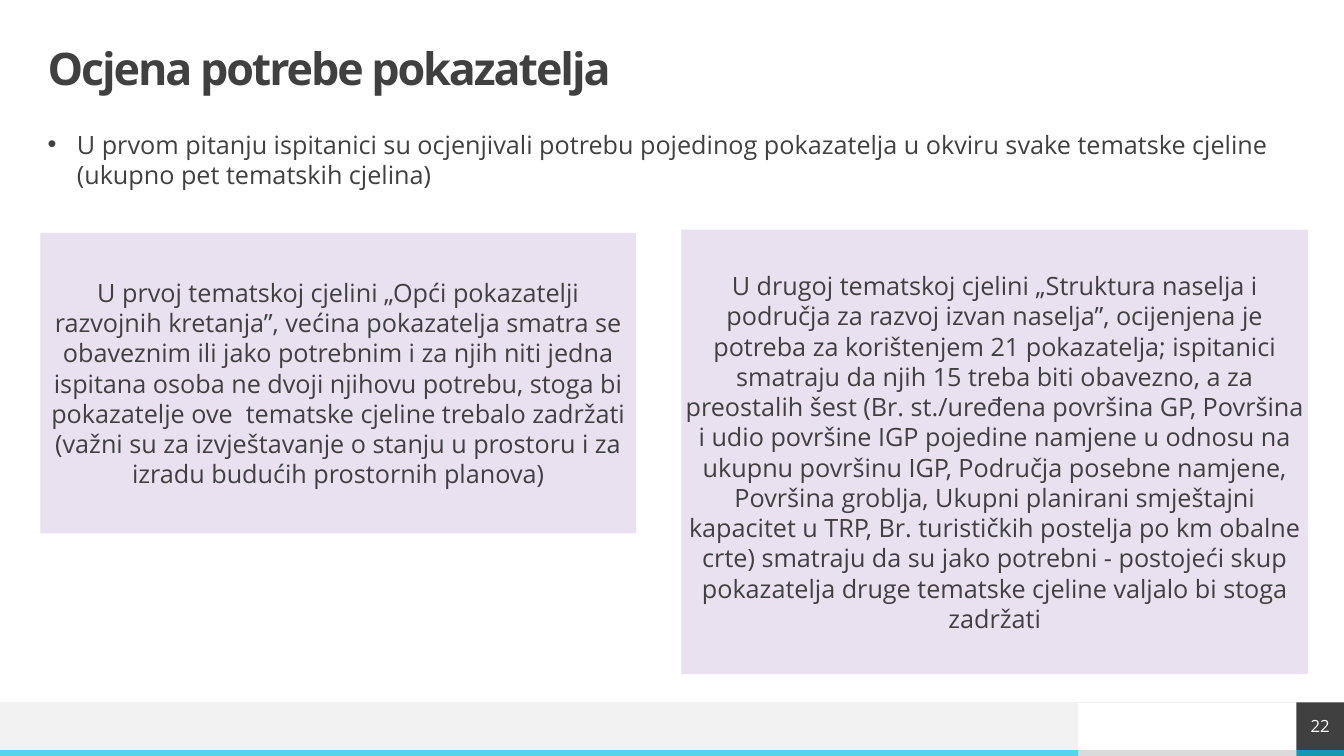
from lxml import etree
from pptx import Presentation
from pptx.dml.color import RGBColor
from pptx.enum.shapes import MSO_CONNECTOR, MSO_SHAPE
from pptx.enum.text import MSO_ANCHOR, PP_ALIGN
from pptx.oxml.ns import qn
from pptx.util import Cm, Pt

RECTANGLE = MSO_SHAPE.RECTANGLE
STRAIGHT = MSO_CONNECTOR.STRAIGHT
TOP, MIDDLE = MSO_ANCHOR.TOP, MSO_ANCHOR.MIDDLE
LEFT, CENTER = PP_ALIGN.LEFT, PP_ALIGN.CENTER

FONT = "Open Sans"
DARK = RGBColor(0x40, 0x40, 0x40)
WHITE = RGBColor(0xFF, 0xFF, 0xFF)
PURPLE = RGBColor(0x70, 0x30, 0xA0)
PALE = RGBColor(0xF2, 0xF2, 0xF2)
GREY = RGBColor(0xDA, 0xDA, 0xDA)
CYAN = RGBColor(0x58, 0xD4, 0xEA)
TEAL = RGBColor(0x16, 0x98, 0xAF)

# Content
TITLE = "Ocjena potrebe pokazatelja"
INTRO = ("U prvom pitanju ispitanici su ocjenjivali potrebu pojedinog pokazatelja "
         "u okviru svake tematske cjeline (ukupno pet tematskih cjelina)")
FIRST_THEME = (
    "U prvoj tematskoj cjelini „Opći pokazatelji razvojnih kretanja”, većina "
    "pokazatelja smatra se obaveznim ili jako potrebnim i za njih niti jedna "
    "ispitana osoba ne dvoji njihovu potrebu, stoga bi pokazatelje ove  tematske "
    "cjeline trebalo zadržati (važni su za izvještavanje o stanju u prostoru i za "
    "izradu budućih prostornih planova)")
SECOND_THEME = (
    "U drugoj tematskoj cjelini „Struktura naselja i područja za razvoj izvan "
    "naselja”, ocijenjena je potreba za korištenjem 21 pokazatelja; ispitanici "
    "smatraju da njih 15 treba biti obavezno, a za preostalih šest (Br. st./uređena "
    "površina GP, Površina i udio površine IGP pojedine namjene u odnosu na ukupnu "
    "površinu IGP, Područja posebne namjene, Površina groblja, Ukupni planirani "
    "smještajni kapacitet u TRP, Br. turističkih postelja po km obalne crte) "
    "smatraju da su jako potrebni - postojeći skup pokazatelja druge tematske "
    "cjeline valjalo bi stoga zadržati")
PAGE_NUMBER = "22"

# Layout in centimetres: left, top, width, height
PAGE_WIDTH, PAGE_HEIGHT = 33.87, 19.05
MARGIN = 1.2
TEXT_WIDTH = 31.47
FOOTER_TOP, STRIP_TOP = 17.7, 18.9
FOOTER_SPLIT, NUMBER_LEFT = 27.17, 32.67
FOOTER_HEIGHT = STRIP_TOP - FOOTER_TOP
STRIP_HEIGHT = PAGE_HEIGHT - STRIP_TOP
THEMES = [
    (FIRST_THEME, (1.02, 5.87, 15.01, 7.57)),
    (SECOND_THEME, (17.17, 5.79, 15.8, 11.2)),
]
FOOTER = [
    (FOOTER_SPLIT, STRIP_TOP, NUMBER_LEFT - FOOTER_SPLIT, STRIP_HEIGHT, GREY),
    (0, FOOTER_TOP, FOOTER_SPLIT, FOOTER_HEIGHT, PALE),
    (0, STRIP_TOP, FOOTER_SPLIT, STRIP_HEIGHT, CYAN),
    (NUMBER_LEFT, STRIP_TOP, PAGE_WIDTH - NUMBER_LEFT, STRIP_HEIGHT, TEAL),
]


def add_panel(page, place, color, opacity=100):
    panel = page.shapes.add_shape(RECTANGLE, *[Cm(length) for length in place])
    panel.shadow.inherit = False
    panel.fill.solid()
    panel.fill.fore_color.rgb = color
    panel.line.fill.background()
    if opacity < 100:
        tint = panel.fill._xPr.find(".//" + qn("a:srgbClr"))
        etree.SubElement(tint, qn("a:alpha")).set("val", str(opacity * 1000))
    return panel


def add_text_box(page, place):
    return page.shapes.add_textbox(*[Cm(length) for length in place])


def write(box, text, size, color=DARK, align=CENTER, anchor=MIDDLE, spacing=1.0):
    frame = box.text_frame
    frame.word_wrap = True
    frame.vertical_anchor = anchor
    frame.margin_left = frame.margin_right = 0
    frame.margin_top = frame.margin_bottom = 0
    para = frame.paragraphs[0]
    para.alignment = align
    para.line_spacing = spacing
    span = para.add_run()
    span.text = text
    span.font.name = FONT
    span.font.size = Pt(size)
    span.font.color.rgb = color
    return para, span


def add_bullet(para, indent):
    properties = para._p.get_or_add_pPr()
    properties.set("marL", str(Cm(indent)))
    properties.set("indent", str(-Cm(indent)))
    etree.SubElement(properties, qn("a:buFont")).set("typeface", "Arial")
    etree.SubElement(properties, qn("a:buChar")).set("char", "•")


def main():
    deck = Presentation()
    deck.slide_width, deck.slide_height = Cm(PAGE_WIDTH), Cm(PAGE_HEIGHT)
    page = deck.slides.add_slide(deck.slide_layouts[6])

    # Footer bands and the rule above them
    for *place, color in FOOTER:
        add_panel(page, place, color)
    rule = page.shapes.add_connector(
        STRAIGHT, Cm(PAGE_WIDTH), Cm(FOOTER_TOP), Cm(0), Cm(FOOTER_TOP))
    rule.line.color.rgb = PALE
    rule.line.width = Pt(0.5)
    etree.SubElement(rule._element.spPr, qn("a:effectLst"))

    # Title
    title = add_text_box(page, (MARGIN, MARGIN, TEXT_WIDTH, 1.2))
    _, span = write(title, TITLE, 32, align=LEFT, spacing=0.9)
    span.font.bold = True
    span._r.get_or_add_rPr().set("spc", "-150")

    # Theme panels
    for text, place in THEMES:
        write(add_panel(page, place, PURPLE, opacity=15), text, 18)

    # Page number
    number = add_panel(page, (NUMBER_LEFT, FOOTER_TOP, PAGE_WIDTH - NUMBER_LEFT,
                              FOOTER_HEIGHT), DARK)
    write(number, PAGE_NUMBER, 12, color=WHITE)

    # Introductory bullet
    intro = add_text_box(page, (MARGIN, 3.25, TEXT_WIDTH, 2.13))
    para, _ = write(intro, INTRO, 18, align=LEFT, anchor=TOP)
    add_bullet(para, 0.74)

    deck.save("out.pptx")


if __name__ == "__main__":
    main()
